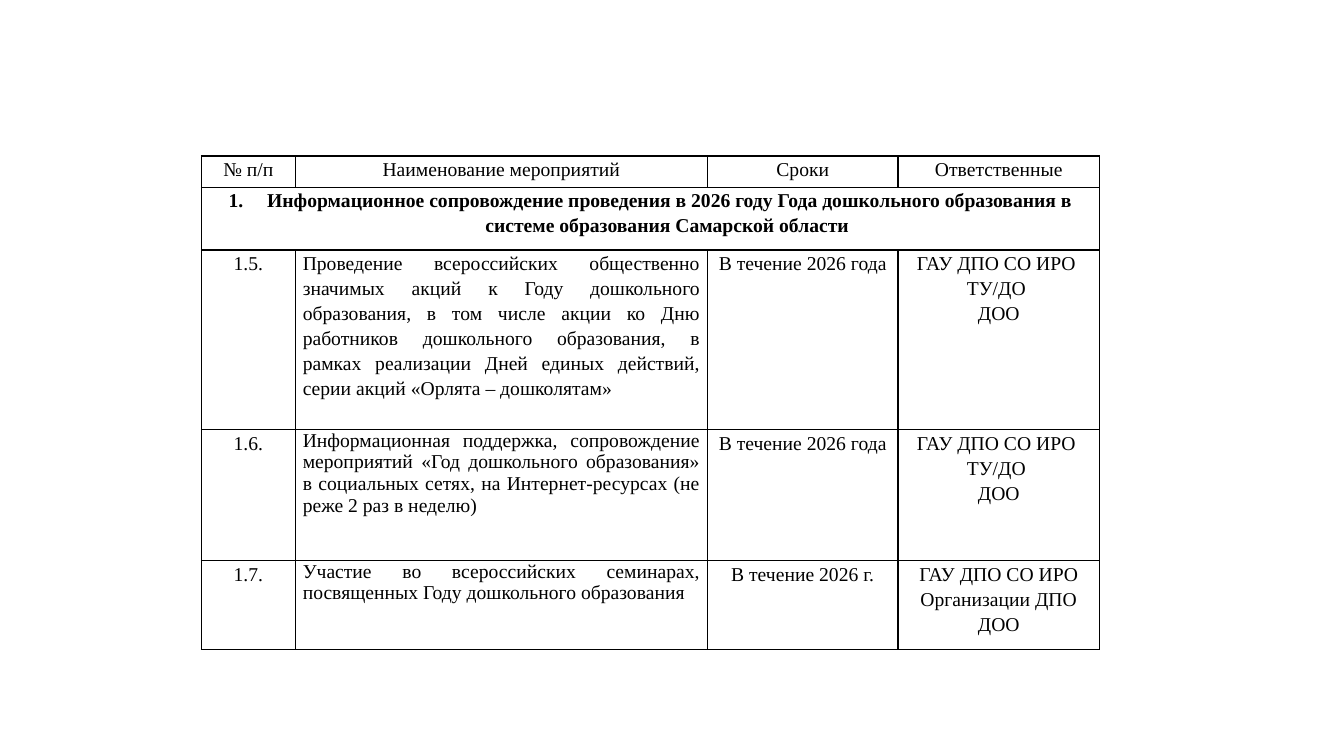
from pptx import Presentation
from pptx.dml.color import RGBColor
from pptx.enum.text import PP_ALIGN as Align
from pptx.oxml import parse_xml
from pptx.oxml.ns import nsdecls
from pptx.util import Cm, Pt

COLUMN_WIDTHS = [2.36, 10.39, 4.8, 5.08]
ROW_HEIGHTS = [0.79, 1.58, 4.53, 3.3, 2.23]
HEADERS = ["№ п/п", "Наименование мероприятий", "Сроки", "Ответственные"]
SECTION = ("Информационное сопровождение проведения в 2026 году Года "
           "дошкольного образования в системе образования Самарской области ")
TEAM = "ГАУ ДПО СО ИРО \nТУ/ДО \nДОО"
EVENTS = [
    ("1.5.",
     "Проведение всероссийских общественно значимых акций к Году дошкольного "
     "образования, в том числе акции ко Дню работников дошкольного образования, "
     "в рамках реализации Дней единых действий, серии акций «Орлята – дошколятам»",
     "В течение 2026 года", TEAM, 1.15),
    ("1.6.",
     "Информационная поддержка, сопровождение мероприятий «Год дошкольного "
     "образования» в социальных сетях, на Интернет-ресурсах (не реже 2 раз в неделю) ",
     "В течение 2026 года", TEAM, 1.0),
    ("1.7.",
     "Участие во всероссийских семинарах, посвященных Году дошкольного образования ",
     "В течение 2026 г.", "ГАУ ДПО СО ИРО\nОрганизации ДПО ДОО", 1.0),
]


def color(value):
    return RGBColor.from_string(value)


class PlanPage:
    font = "Times New Roman"
    size = Pt(14)
    ink = "000000"

    def __init__(self, deck):
        self.page = deck.slides.add_slide(deck.slide_layouts[6])

    def table(self, left, top, widths, heights):
        frame = self.page.shapes.add_table(
            len(heights), len(widths), Cm(left), Cm(top),
            Cm(sum(widths)), Cm(sum(heights)))
        table = frame.table
        table.first_row = table.horz_banding = False
        for column, width in zip(table.columns, widths):
            column.width = Cm(width)
        for row, height in zip(table.rows, heights):
            row.height = Cm(height)
        for cell in table.iter_cells():
            self.outline(cell)
            cell.fill.background()
            cell.margin_left = cell.margin_right = Cm(0.19)
            cell.margin_top = cell.margin_bottom = 0
        return table

    def outline(self, cell):
        properties = cell._tc.get_or_add_tcPr()
        for side in "LRTB":
            properties.append(parse_xml(
                f'<a:ln{side} {nsdecls("a")} w="{Pt(1)}"><a:solidFill>'
                f'<a:srgbClr val="{self.ink}"/></a:solidFill></a:ln{side}>'))

    def label(self, cell, text, align=Align.CENTER, spacing=1.15, bold=False):
        cell.text_frame.text = text
        for para in cell.text_frame.paragraphs:
            para.alignment = align
            para.line_spacing = spacing
            for span in para.runs:
                span.font.name = self.font
                span.font.size = self.size
                span.font.bold = bold
                span.font.color.rgb = color(self.ink)

    def number(self, para, indent):
        properties = para._p.get_or_add_pPr()
        properties.set("marL", str(Cm(indent)))
        properties.set("indent", str(-Cm(indent)))
        properties.append(parse_xml(
            f'<a:buFont {nsdecls("a")} typeface="{self.font}"/>'))
        properties.append(parse_xml(
            f'<a:buAutoNum {nsdecls("a")} type="arabicPeriod"/>'))


def main():
    deck = Presentation()
    deck.slide_width, deck.slide_height = Cm(33.87), Cm(19.05)
    plan = PlanPage(deck)
    table = plan.table(5.08, 3.93, COLUMN_WIDTHS, ROW_HEIGHTS)

    for column, header in enumerate(HEADERS):
        plan.label(table.cell(0, column), header)

    section = table.cell(1, 0)
    section.merge(table.cell(1, len(HEADERS) - 1))
    plan.label(section, SECTION, bold=True)
    plan.number(section.text_frame.paragraphs[0], 0.97)

    for row, (index, event, term, owners, spacing) in enumerate(EVENTS, start=2):
        plan.label(table.cell(row, 0), index)
        plan.label(table.cell(row, 1), event, Align.JUSTIFY, spacing)
        plan.label(table.cell(row, 2), term)
        plan.label(table.cell(row, 3), owners)

    deck.save("out.pptx")


if __name__ == "__main__":
    main()
